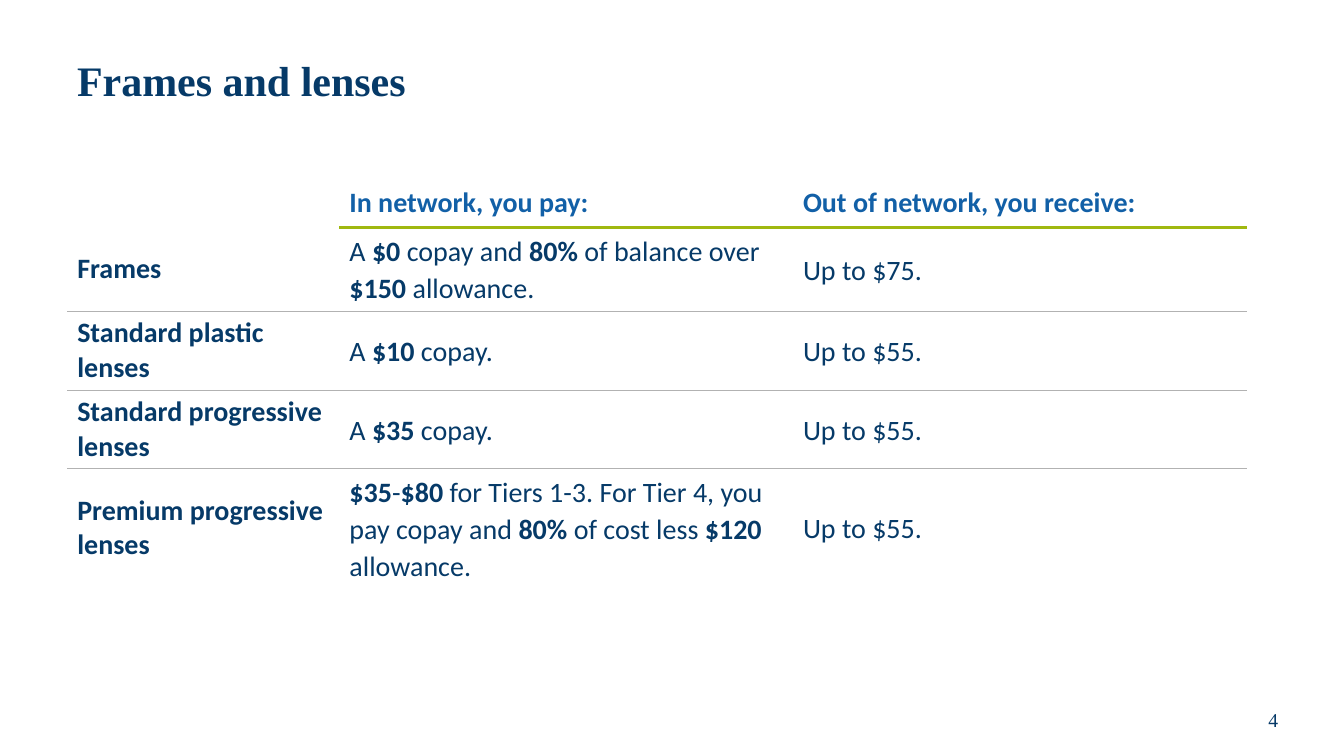
import pptx
import pptx.dml.color
import pptx.enum.text
import pptx.oxml.ns
import pptx.util
from lxml import etree

Pt = pptx.util.Pt
NAVY, BLUE, GREEN, GRAY = "063A68", "1260A7", "A0B810", "B2B2B2"
MIDDLE = pptx.enum.text.MSO_ANCHOR.MIDDLE


def write(frame, text, size=20, font="Calibri", color=NAVY, spacing=None, align=None):
    frame.word_wrap = True
    frame.vertical_anchor = MIDDLE
    paragraph = frame.paragraphs[0]
    paragraph.alignment = align
    paragraph.line_spacing = spacing
    for index, piece in enumerate(text.split("**")):
        if piece:
            run = paragraph.add_run()
            run.text = piece
            run.font.size = Pt(size)
            run.font.name = font
            run.font.bold = index % 2 == 1
            run.font.color.rgb = pptx.dml.color.RGBColor.from_string(color)


def add_rule(cell, side, color, width):
    rule = etree.SubElement(cell._tc.get_or_add_tcPr(), pptx.oxml.ns.qn("a:" + side), w=str(Pt(width)))
    fill = etree.SubElement(rule, pptx.oxml.ns.qn("a:solidFill"))
    etree.SubElement(fill, pptx.oxml.ns.qn("a:srgbClr"), val=color)


deck = pptx.Presentation()
deck.slide_width, deck.slide_height = Pt(960), Pt(540)
slide = deck.slides.add_slide(deck.slide_layouts[6])

title = slide.shapes.add_textbox(Pt(48), Pt(18), Pt(864), Pt(83))
write(title.text_frame, "**Frames and lenses**", size=30, font="Times New Roman", spacing=0.9)

page_number = slide.shapes.add_textbox(Pt(867.5), Pt(496), Pt(84), Pt(36))
write(page_number.text_frame, "4", size=14, font="Times New Roman",
      align=pptx.enum.text.PP_ALIGN.CENTER)

benefits = [
    ("", "In network, you pay:", "Out of network, you receive:"),
    ("Frames", "A **$0 **copay and **80%** of balance over **$150 **allowance.", "Up to $75."),
    ("Standard plastic lenses", "A **$10** copay.", "Up to $55."),
    ("Standard progressive lenses", "A **$35** copay.", "Up to $55."),
    ("Premium progressive lenses",
     "**$35**-**$80** for Tiers 1-3. For Tier 4, you pay copay and **80% **of cost less **$120 **allowance.",
     "Up to $55."),
]
row_heights = [36, 59.4, 56.4, 56.4, 78]
column_widths = [194.4, 324, 324]

table = slide.shapes.add_table(
    len(benefits), len(column_widths), Pt(48), Pt(126.7),
    Pt(sum(column_widths)), Pt(sum(row_heights))).table
table._tbl.tblPr.find(pptx.oxml.ns.qn("a:tableStyleId")).text = "{2D5ABB26-0587-4C30-8999-92F81FD0307C}"
table.first_row = table.horz_banding = False
for column, width in zip(table.columns, column_widths):
    column.width = Pt(width)

for r, (benefit, height) in enumerate(zip(benefits, row_heights)):
    table.rows[r].height = Pt(height)
    for c, text in enumerate(benefit):
        cell = table.cell(r, c)
        cell.vertical_anchor = MIDDLE
        for side, row_above in (("lnT", r - 1), ("lnB", r)):
            if row_above == 0 and c > 0:
                add_rule(cell, side, GREEN, 2.25)
            elif 0 < row_above < len(benefits) - 1:
                add_rule(cell, side, GRAY, 0.5)
        cell.fill.background()
        if r == 0 or c == 0:
            write(cell.text_frame, f"**{text}**", color=BLUE if r == 0 else NAVY)
        else:
            write(cell.text_frame, text, spacing=1.07)

deck.save("out.pptx")
